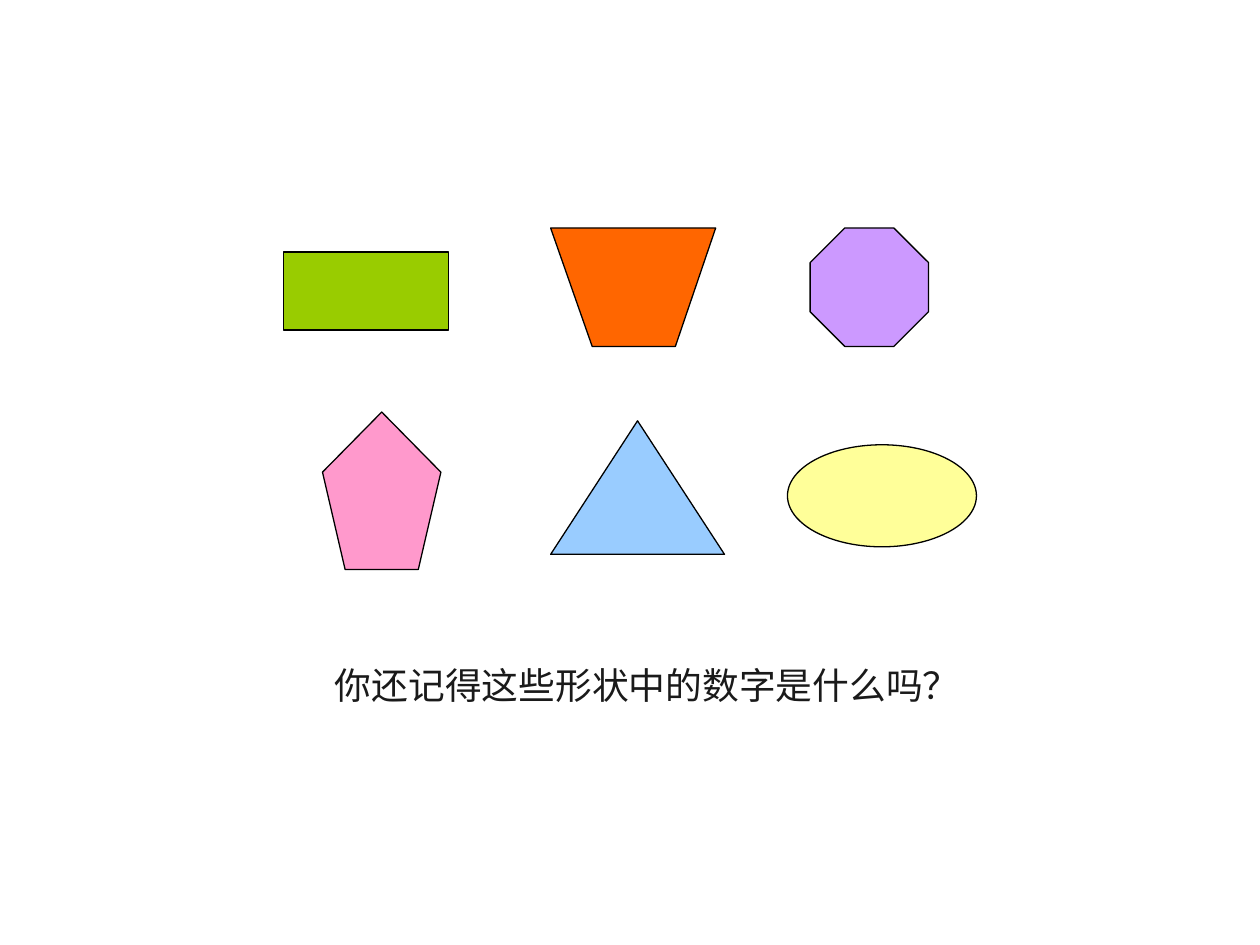
"""Build a slide of six coloured shapes with a question below them."""
from lxml import etree
from pptx import Presentation
from pptx.dml.color import RGBColor
from pptx.enum.shapes import MSO_SHAPE
from pptx.enum.text import MSO_AUTO_SIZE
from pptx.oxml.ns import qn
from pptx.util import Inches, Pt

RECTANGLE = MSO_SHAPE.RECTANGLE
PENTAGON = MSO_SHAPE.REGULAR_PENTAGON
OVAL = MSO_SHAPE.OVAL
TRIANGLE = MSO_SHAPE.ISOSCELES_TRIANGLE
OCTAGON = MSO_SHAPE.OCTAGON
GROW = MSO_AUTO_SIZE.SHAPE_TO_FIT_TEXT
FONT = "Noto Sans CJK SC"


def color(value):
    return RGBColor.from_string(value)


def paint(figure, fill):
    figure.shadow.inherit = False
    figure.fill.solid()
    figure.fill.fore_color.rgb = color(fill)
    figure.line.color.rgb = color("000000")
    figure.line.width = Pt(0.75)


prs = Presentation()
prs.slide_width = Inches(10)
prs.slide_height = Inches(7.5)
slide = prs.slides.add_slide(prs.slide_layouts[6])

bucket_points = [(4.37, 1.81), (4.7, 2.75), (5.36, 2.75), (5.68, 1.81)]
corners = [(Inches(x), Inches(y)) for x, y in bucket_points]
builder = slide.shapes.build_freeform(*corners[0])
builder.add_line_segments(corners[1:], close=True)
paint(builder.convert_to_shape(), "FF6600")

figures = [
    (RECTANGLE, 2.25, 2, 1.31, 0.62, "99CC00"),
    (PENTAGON, 2.56, 3.27, 0.94, 1.25, "FF99CC"),
    (OVAL, 6.25, 3.53, 1.5, 0.81, "FFFF99"),
    (TRIANGLE, 4.37, 3.34, 1.38, 1.06, "99CCFF"),
    (OCTAGON, 6.43, 1.81, 0.94, 0.94, "CC99FF"),
]
for preset, left, top, width, height, fill in figures:
    figure = slide.shapes.add_shape(
        preset, Inches(left), Inches(top), Inches(width), Inches(height))
    paint(figure, fill)

question = slide.shapes.add_textbox(
    Inches(2.56), Inches(5.26), Inches(6.56), Inches(0.45))
frame = question.text_frame
frame.word_wrap = True
frame.auto_size = GROW
frame.margin_top = frame.margin_bottom = Inches(0)
run = frame.paragraphs[0].add_run()
run.text = "你还记得这些形状中的数字是什么吗？"
run.font.size = Pt(21)
run.font.name = FONT
run.font.color.rgb = color("1A1A1A")
etree.SubElement(run._r.get_or_add_rPr(), qn("a:ea"), typeface=FONT)

prs.save("out.pptx")
